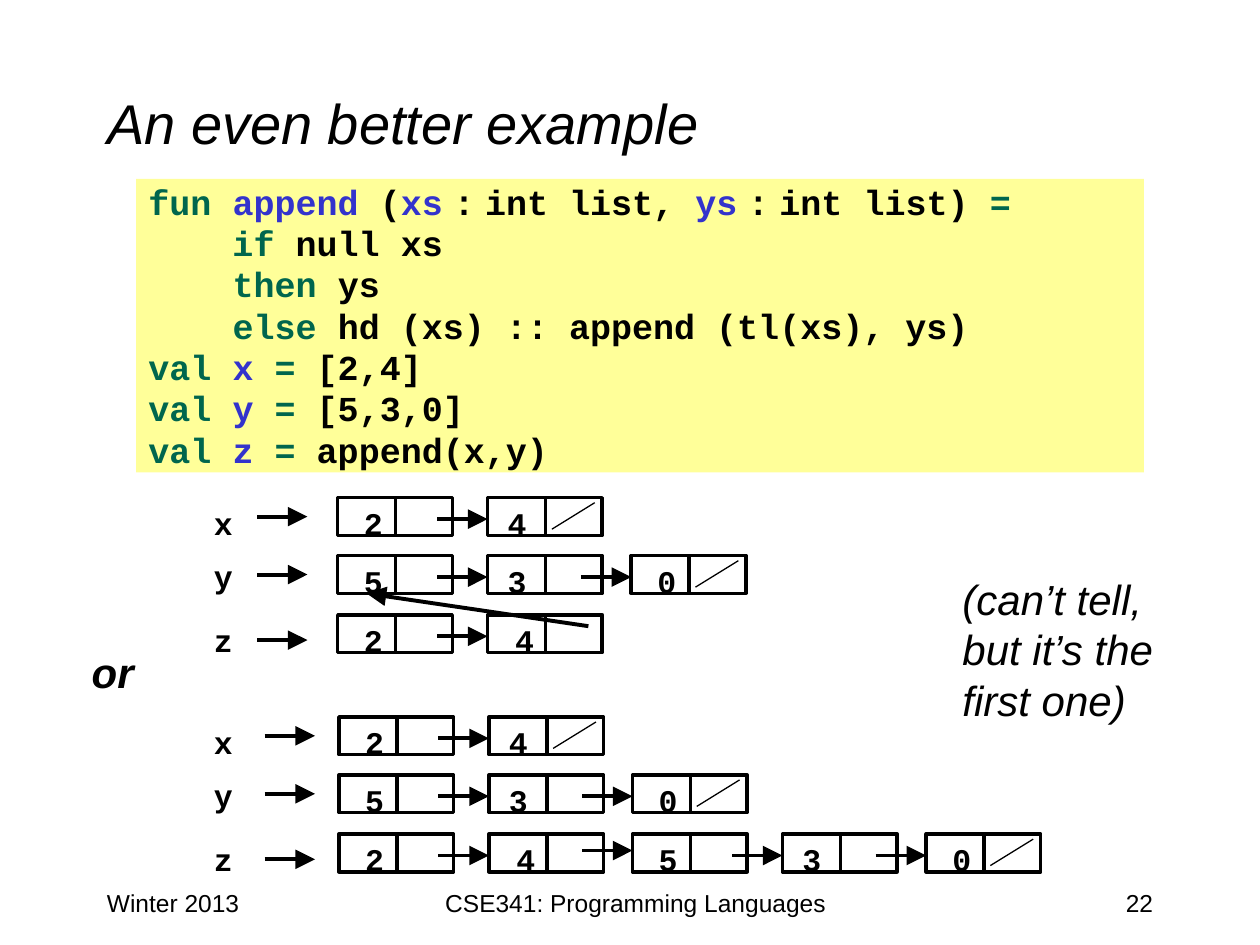
from lxml.etree import SubElement
from pptx import Presentation
from pptx.dml.color import RGBColor
from pptx.enum.shapes import MSO_CONNECTOR as CONN, MSO_SHAPE as SHAPE
from pptx.enum.text import MSO_ANCHOR as ANCHOR, MSO_AUTO_SIZE as AUTO, PP_ALIGN as ALIGN
from pptx.oxml.ns import qn
from pptx.util import Pt

PX = 9144  # 100 px to the inch
BLACK, GREEN, BLUE, YELLOW = "000000", "00664D", "3333CC", "FFFF99"
rgb = RGBColor.from_string

prs = Presentation()
prs.slide_width, prs.slide_height = 1000 * PX, 750 * PX
slide = prs.slides.add_slide(prs.slide_layouts[5])


def add_text(tf, lines, size, font="Arial", bold=False, italic=False, align=ALIGN.LEFT):
    """Write lines made of (text, colour[, size]) runs, one paragraph a line."""
    for i, line in enumerate(lines):
        p = tf.paragraphs[0] if i == 0 else tf.add_paragraph()
        p.alignment = align
        for text, colour, *own_size in line:
            r = p.add_run()
            r.text = text
            r.font.size = Pt(own_size[0] if own_size else size)
            r.font.name, r.font.bold, r.font.italic = font, bold, italic
            r.font.color.rgb = rgb(colour)


def add_line(x1, y1, x2, y2, width, arrow=False):
    c = slide.shapes.add_connector(CONN.STRAIGHT, x1 * PX, y1 * PX, x2 * PX, y2 * PX)
    c.line.color.rgb = rgb(BLACK)
    c.line.width = Pt(width)
    if arrow:
        SubElement(c.line._get_or_add_ln(), qn("a:tailEnd"), type="triangle", w="lg", len="lg")
    SubElement(c._element.spPr, qn("a:effectLst"))


# Title
title = slide.shapes.title
title.left, title.top, title.width, title.height = 75 * PX, 34 * PX, 850 * PX, 125 * PX
title.text_frame.vertical_anchor = ANCHOR.MIDDLE
add_text(title.text_frame, [[("An even better example", BLACK)]], 32, italic=True)

# Footer
for text, x, w, align in [
    ("Winter 2013", 75, 208, ALIGN.LEFT),
    ("CSE341: Programming Languages", 317, 375, ALIGN.CENTER),
    ("22", 717, 208, ALIGN.RIGHT),
]:
    tf = slide.shapes.add_textbox(x * PX, 700 * PX, w * PX, 50 * PX).text_frame
    tf.word_wrap = True
    add_text(tf, [[(text, BLACK)]], 14, align=align)

# Code panel
typed = [(" ", BLUE, 10), (":", BLACK), (" ", BLACK, 10)]
code = [
    [("fun ", GREEN), ("append ", BLUE), ("(", BLACK), ("xs", BLUE), *typed,
     ("int list, ", BLACK), ("ys", BLUE), *typed, ("int list) ", BLACK), ("=", GREEN)],
    [("    if", GREEN), (" null xs", BLACK)],
    [("    ", BLUE), ("then ", GREEN), ("ys", BLACK)],
    [("    ", BLUE), ("else ", GREEN), ("hd (xs) :: append (tl(xs), ys)", BLACK)],
]
for name, value in [("x", "[2,4]"), ("y", "[5,3,0]"), ("z", "append(x,y)")]:
    code.append([("val ", GREEN), (name + " ", BLUE), ("= ", GREEN), (value, BLACK)])
panel = slide.shapes.add_shape(SHAPE.RECTANGLE, 108 * PX, 142 * PX, 800 * PX, 233 * PX)
panel.shadow.inherit = False
panel.fill.solid()
panel.fill.fore_color.rgb = rgb(YELLOW)
panel.line.fill.background()
tf = panel.text_frame
tf.word_wrap = True
tf.vertical_anchor = ANCHOR.TOP
add_text(tf, code, 20, "Courier New", bold=True)
for p in tf.paragraphs:
    p.line_spacing = 0.9
    p.space_before = Pt(2)
    pPr = p._p.get_or_add_pPr()
    pPr.set("marL", str(38 * PX))
    pPr.set("indent", str(-38 * PX))

# List diagrams: z shares the cells of y, or z has its own copies
COLUMNS = [0, 119, 233, 352, 466]
CELL_W, CELL_H, DIVIDER, LINK = 91, 30, 46, 40
ROWS = [("x", 0, 0, 15), ("y", 46, 42, 15), ("z", 93, 93, 20)]  # name, row, label, pointer
labels = []
for left, top, pointer_x, lists in [
    (268, 395, 204, ["24", "530", "24"]),
    (269, 569, 210, ["24", "530", "24530"]),
]:
    for (name, row_dy, label_dy, pointer_dy), digits in zip(ROWS, lists):
        y = top + row_dy
        labels.append((name, 160, top + label_dy))
        add_line(pointer_x, y + pointer_dy, pointer_x + LINK, y + pointer_dy, 2.25, arrow=True)
        for i, digit in enumerate(digits):
            x = left + COLUMNS[i]
            cell = slide.shapes.add_shape(SHAPE.RECTANGLE, x * PX, y * PX, CELL_W * PX, CELL_H * PX)
            cell.shadow.inherit = False
            cell.fill.background()
            cell.line.color.rgb = rgb(BLACK)
            cell.line.width = Pt(2)
            add_line(x + DIVIDER, y, x + DIVIDER, y + CELL_H, 2)
            second_of_z = name == "z" and i == 1
            digit_dx = 12 if second_of_z else 6 if i % 2 else 11
            labels.append((digit, x + digit_dx, y))
            if i < len(digits) - 1:
                next_x = left + COLUMNS[i + 1]
                link_y = y + (13 if second_of_z else 17)
                add_line(next_x - LINK, link_y, next_x, link_y, 2.25, arrow=True)
            elif digits != "24" or name == "x":
                add_line(x + 51, y + 25, x + 85, y + 4, 0.75)  # empty tail
add_line(467, 497, 291, 471, 2.25, arrow=True)  # shared tail

# Names and digits
for text, x, y in labels:
    tf = slide.shapes.add_textbox(x * PX, y * PX, 30 * PX, 25 * PX).text_frame
    tf.word_wrap = False
    tf.auto_size = AUTO.SHAPE_TO_FIT_TEXT
    add_text(tf, [[(text, BLACK)]], 18, "Courier New", bold=True)

# Remarks
for lines, x, y, w, h, bold in [
    (["or"], 63, 508, 54, 50, True),
    (["(can’t tell,", "but it’s the", "first one)"], 754, 450, 182, 131, False),
]:
    tf = slide.shapes.add_textbox(x * PX, y * PX, w * PX, h * PX).text_frame
    tf.word_wrap = False
    tf.auto_size = AUTO.SHAPE_TO_FIT_TEXT
    add_text(tf, [[(line, BLACK)] for line in lines], 24, bold=bold, italic=True)

prs.save("out.pptx")
